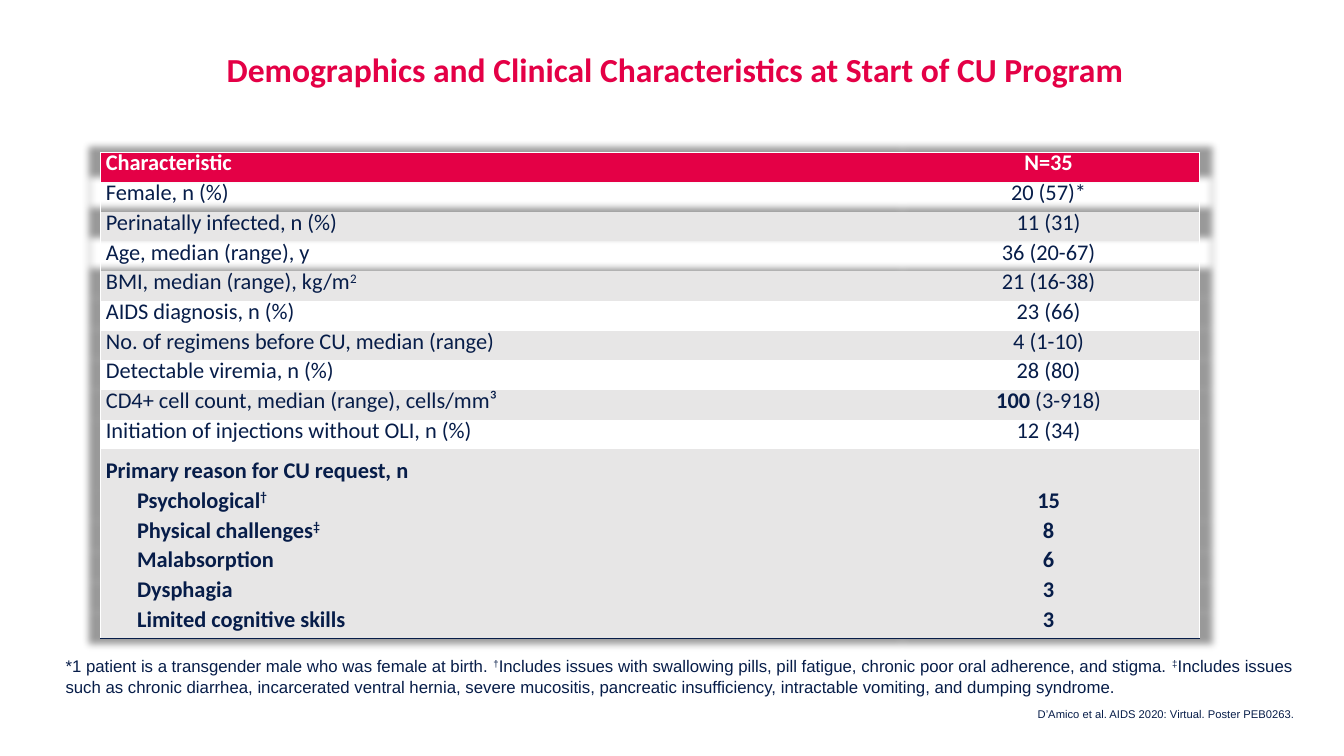
from lxml import etree
from pptx import Presentation
from pptx.dml.color import RGBColor
from pptx.enum.text import MSO_ANCHOR, PP_ALIGN
from pptx.oxml import parse_xml
from pptx.oxml.ns import qn
from pptx.util import Inches, Pt

LEFT, CENTER, RIGHT = PP_ALIGN.LEFT, PP_ALIGN.CENTER, PP_ALIGN.RIGHT
TOP, BOTTOM = MSO_ANCHOR.TOP, MSO_ANCHOR.BOTTOM
RED = RGBColor(0xE4, 0x00, 0x46)
NAVY = RGBColor(0x07, 0x1D, 0x49)
GRAY = RGBColor(0xE7, 0xE6, 0xE6)
WHITE = RGBColor(0xFF, 0xFF, 0xFF)
NO_GRID = "{2D5ABB26-0587-4C30-8999-92F81FD0307C}"
SHADOW = (
    '<a:effectLst xmlns:a="http://schemas.openxmlformats.org/drawingml/2006/main">'
    '<a:outerShdw blurRad="63500" sx="102000" sy="102000" algn="ctr" rotWithShape="0">'
    '<a:srgbClr val="000000"><a:alpha val="40000"/></a:srgbClr>'
    '</a:outerShdw></a:effectLst>'
)

# Label, value, bold, indented; text between carets is raised
ROWS = [
    ("Characteristic", "N=35", True, False),
    ("Female, n (%)", "20 (57)*", False, False),
    ("Perinatally infected, n (%)", "11 (31)", False, False),
    ("Age, median (range), y", "36 (20-67)", False, False),
    ("BMI, median (range), kg/m^2^", "21 (16-38)", False, False),
    ("AIDS diagnosis, n (%)", "23 (66)", False, False),
    ("No. of regimens before CU, median (range)", "4 (1-10)", False, False),
    ("Detectable viremia, n (%)", "28 (80)", False, False),
    ("CD4+ cell count, median (range), cells/mm³", "100 (3-918)", False, False),
    ("Initiation of injections without OLI, n (%)", "12 (34)", False, False),
    ("Primary reason for CU request, n", "", True, False),
    ("Psychological^†^", "15", True, True),
    ("Physical challenges^‡^", "8", True, True),
    ("Malabsorption", "6", True, True),
    ("Dysphagia", "3", True, True),
    ("Limited cognitive skills", "3", True, True),
]
CLEAR = (1, 3)
REASON = 10
LAST = len(ROWS) - 1


def write(para, text, size=16, font="Calibri", color=NAVY, bold=False,
          align=LEFT, gap=None, after=0):
    """Append text to a paragraph, raising the parts between carets."""
    para.alignment = align
    para.line_spacing = gap
    para.space_after = Pt(after)
    for i, part in enumerate(text.split("^")):
        run = para.add_run()
        run.text = part
        run.font.size = Pt(size)
        run.font.name = font
        run.font.bold = bold
        run.font.color.rgb = color
        if i % 2:
            run.font._element.set("baseline", "30000")


def edge(cell, side, color):
    """Draw one 1-point border: side is L, R, T or B."""
    props = cell._tc.get_or_add_tcPr()
    line = etree.SubElement(props, qn("a:ln" + side), w="12700")
    fill = etree.SubElement(line, qn("a:solidFill"))
    etree.SubElement(fill, qn("a:srgbClr"), val=str(color))


prs = Presentation()
prs.slide_width, prs.slide_height = Inches(13.33), Inches(7.5)
slide = prs.slides.add_slide(prs.slide_layouts[6])

# Title, footnote and citation
TEXTS = [
    ((0.6, 0.45, 12.19, 0.44), BOTTOM,
     "Demographics and Clinical Characteristics at Start of CU Program",
     dict(size=24, color=RED, bold=True, align=CENTER, gap=0.85)),
    ((0.65, 6.58, 12.19, 0.33), BOTTOM,
     "*1 patient is a transgender male who was female at birth. "
     "^†^Includes issues with swallowing pills, pill fatigue, chronic poor oral "
     "adherence, and stigma. ^‡^Includes issues such as chronic diarrhea, "
     "incarcerated ventral hernia, severe mucositis, pancreatic insufficiency, "
     "intractable vomiting, and dumping syndrome.",
     dict(size=12, font="Arial", after=4)),
    ((7.15, 7.02, 5.69, 0.24), TOP,
     "D’Amico et al. AIDS 2020: Virtual. Poster PEB0263.",
     dict(size=8, font="Arial", align=RIGHT, after=4)),
]
for place, anchor, text, style in TEXTS:
    frame = slide.shapes.add_textbox(*map(Inches, place)).text_frame
    frame.word_wrap = True
    frame.vertical_anchor = anchor
    frame.margin_left = frame.margin_right = 0
    frame.margin_top = frame.margin_bottom = 0
    write(frame.paragraphs[0], text, **style)

# Patient table
table = slide.shapes.add_table(len(ROWS), 2, Inches(1), Inches(1.51),
                               Inches(10.9), Inches(4.71)).table
table.horz_banding = False
props = table._tbl.tblPr
props.find(qn("a:tableStyleId")).text = NO_GRID
props.insert(0, parse_xml(SHADOW))
table.columns[0].width, table.columns[1].width = Inches(7.9), Inches(3)

for r, (label, value, bold, inset) in enumerate(ROWS):
    table.rows[r].height = Inches(4.71 / len(ROWS))
    for c, text in enumerate((label, value)):
        cell = table.cell(r, c)
        cell.vertical_anchor = BOTTOM
        cell.margin_left = cell.margin_right = Inches(0.05)
        cell.margin_top = cell.margin_bottom = Inches(0.05)
        style = dict(color=NAVY if r else WHITE, gap=Pt(14),
                     align=CENTER if c else LEFT)
        para = cell.text_frame.paragraphs[0]
        if text.startswith("100"):
            write(para, "100", bold=True, **style)
            text = text[3:]
        write(para, text, bold=bold, **style)
        if inset and c == 0:
            para._p.get_or_add_pPr().set("marL", str(Inches(0.31)))

        edge(cell, "R" if c else "L", WHITE)
        if r == 0:
            edge(cell, "T", WHITE)
        if r == LAST:
            edge(cell, "B", NAVY)
        if r in CLEAR:
            cell.fill.background()
        else:
            cell.fill.solid()
            shade = GRAY if r >= REASON or r % 2 == 0 else WHITE
            cell.fill.fore_color.rgb = shade if r else RED

prs.save("out.pptx")
